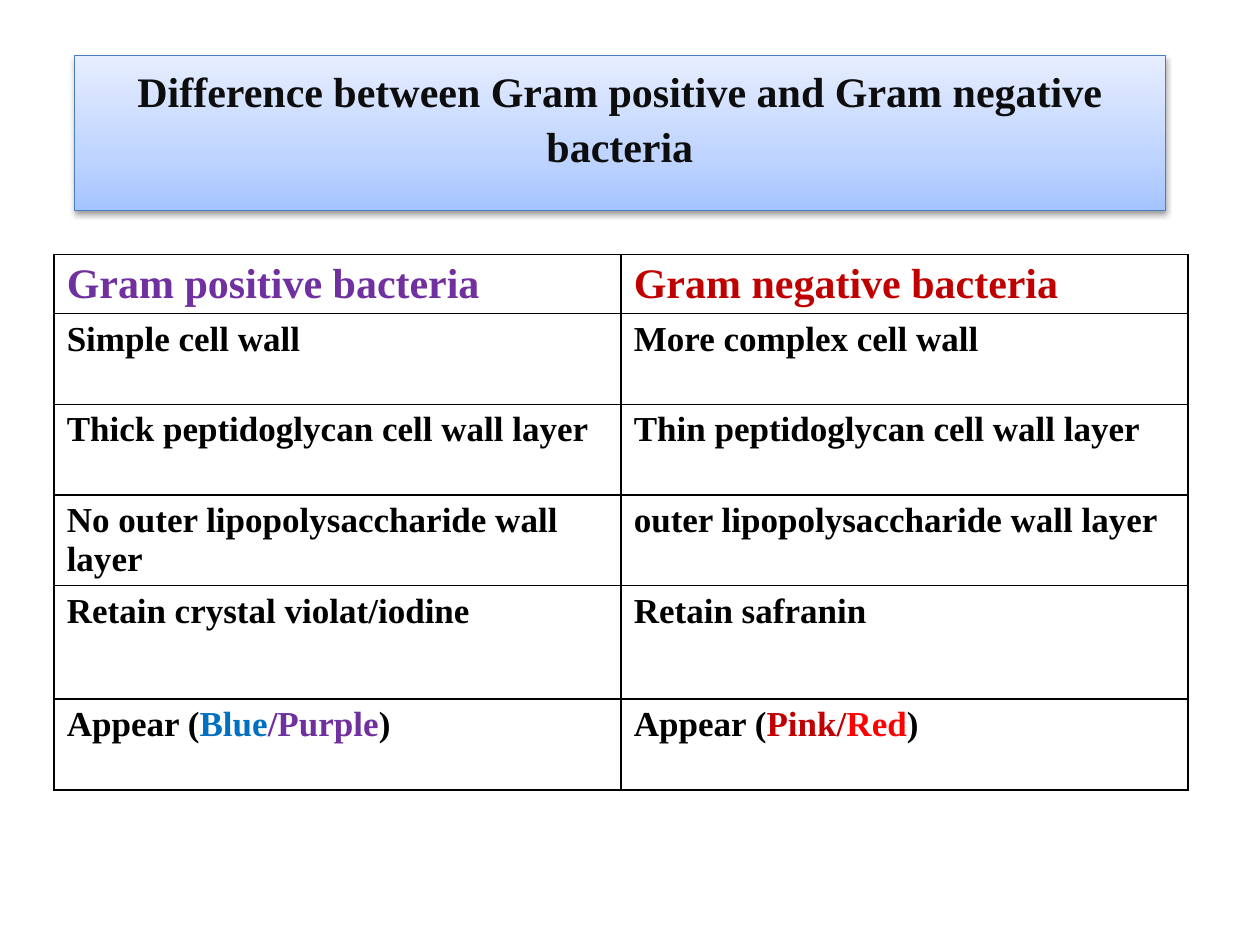
from lxml.etree import fromstring
from pptx import Presentation
from pptx.dml.color import RGBColor
from pptx.enum.text import MSO_ANCHOR, MSO_AUTO_SIZE, PP_ALIGN
from pptx.util import Inches, Pt

NS = 'xmlns:a="http://schemas.openxmlformats.org/drawingml/2006/main"'
BLACK, PURPLE, DARK_RED = "000000", "7030A0", "C00000"

TITLE = "Difference between Gram positive and Gram negative bacteria"
HEADERS = [
    [("Gram positive bacteria", PURPLE)],
    [("Gram negative bacteria", DARK_RED)],
]
DIFFERENCES = [
    ("Simple cell wall", "More complex cell wall"),
    ("Thick peptidoglycan cell wall layer", "Thin peptidoglycan cell wall layer"),
    ("No outer lipopolysaccharide wall layer", "outer lipopolysaccharide wall layer"),
    ("Retain crystal violat/iodine", "Retain safranin"),
]
APPEARANCES = [
    [("Appear (", BLACK), ("Blue", "0070C0"), ("/Purple", PURPLE), (")", BLACK)],
    [("Appear (", BLACK), ("Pink/", DARK_RED), ("Red", "FF0000"), (")", BLACK)],
]
ROW_HEIGHTS = [0.47, 0.72, 0.72, 0.72, 0.9, 0.72]


def color(hex_string):
    return RGBColor.from_string(hex_string)


def element(xml):
    """Parse a DrawingML fragment, declaring the a: prefix on its root."""
    tag, rest = xml.split(">", 1)
    if tag.endswith("/"):
        return fromstring(f"{tag[:-1]} {NS}/>{rest}")
    return fromstring(f"{tag} {NS}>{rest}")


class ComparisonSlide:
    font_name = "Times New Roman"
    heading_size = 24
    body_size = 20

    def __init__(self, presentation):
        self.slide = presentation.slides.add_slide(presentation.slide_layouts[5])

    def style(self, font, size, hex_string):
        font.name = self.font_name
        font.size = Pt(size)
        font.bold = True
        font.color.rgb = color(hex_string)

    def banner_title(self, text, left, top, width, height):
        banner = self.slide.shapes.title
        banner.left, banner.top = Inches(left), Inches(top)
        banner.width, banner.height = Inches(width), Inches(height)

        properties = banner._element.spPr
        stops = "".join(
            f'<a:gs pos="{percent * 1000}"><a:srgbClr val="{shade}"/></a:gs>'
            for percent, shade in [(0, "A4C4FF"), (35, "BFD4FF"), (100, "E6EEFF")]
        )
        properties.append(element('<a:prstGeom prst="roundRect"><a:avLst/></a:prstGeom>'))
        properties.append(element(
            f'<a:gradFill rotWithShape="1"><a:gsLst>{stops}</a:gsLst>'
            '<a:lin ang="16200000" scaled="0"/></a:gradFill>'
        ))
        banner.line.color.rgb = color("4B7EBC")
        banner.line.width = Pt(0.75)
        properties.append(element(
            f'<a:effectLst><a:outerShdw blurRad="{Pt(3.1)}" dist="{Pt(1.6)}" '
            'dir="5400000" rotWithShape="0"><a:srgbClr val="000000">'
            '<a:alpha val="38000"/></a:srgbClr></a:outerShdw></a:effectLst>'
        ))

        frame = banner.text_frame
        frame.text = text
        frame.word_wrap = True
        frame.auto_size = MSO_AUTO_SIZE.NONE
        frame.vertical_anchor = MSO_ANCHOR.MIDDLE
        frame.margin_bottom = Inches(0.32)
        heading = frame.paragraphs[0]
        heading.alignment = PP_ALIGN.CENTER
        heading.line_spacing = 1.1
        self.style(heading.runs[0].font, self.heading_size, "0D0D0D")

    def cell(self, cell, parts, size):
        """Fill a cell with (text, colour) parts and frame it in black."""
        paragraph = cell.text_frame.paragraphs[0]
        for text, hex_string in parts:
            run = paragraph.add_run()
            run.text = text
            self.style(run.font, size, hex_string)
        properties = cell._tc.get_or_add_tcPr()
        for side in "LRTB":
            properties.append(element(
                f'<a:ln{side} w="{Pt(1)}"><a:solidFill><a:srgbClr val="{BLACK}"/>'
                f'</a:solidFill></a:ln{side}>'
            ))
        cell.fill.background()

    def table(self, rows, row_heights, left, top, width):
        table = self.slide.shapes.add_table(
            len(rows), len(rows[0]), Inches(left), Inches(top),
            Inches(width), Inches(sum(row_heights)),
        ).table
        table.horz_banding = False
        for row_index, (row, height) in enumerate(zip(rows, row_heights)):
            table.rows[row_index].height = Inches(height)
            size = self.body_size if row_index else self.heading_size
            for column_index, parts in enumerate(row):
                self.cell(table.cell(row_index, column_index), parts, size)


def main():
    presentation = Presentation()
    presentation.slide_width = Inches(10)
    presentation.slide_height = Inches(7.5)
    comparison = ComparisonSlide(presentation)
    comparison.banner_title(TITLE, 0.59, 0.44, 8.66, 1.23)
    differences = [[[(text, BLACK)] for text in pair] for pair in DIFFERENCES]
    comparison.table(
        [HEADERS, *differences, APPEARANCES], ROW_HEIGHTS, 0.43, 2.02, 9
    )
    presentation.save("out.pptx")


if __name__ == "__main__":
    main()
